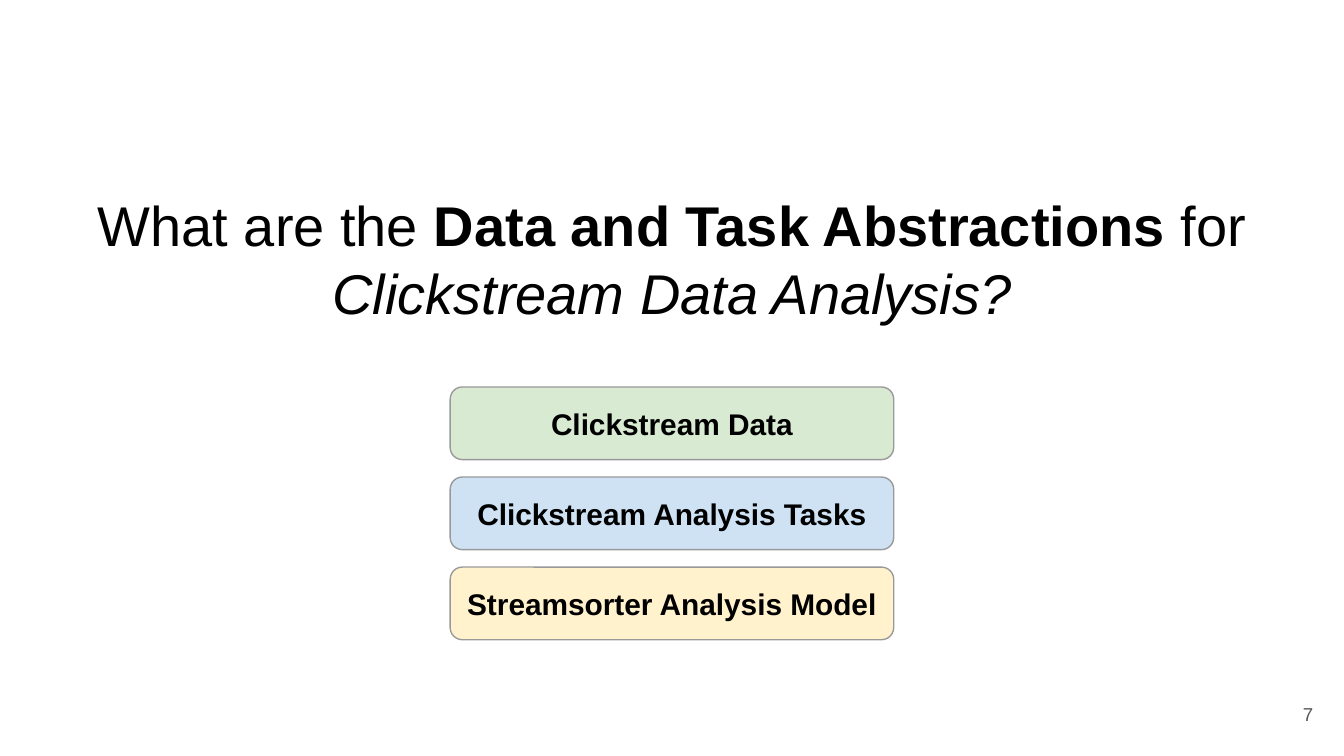
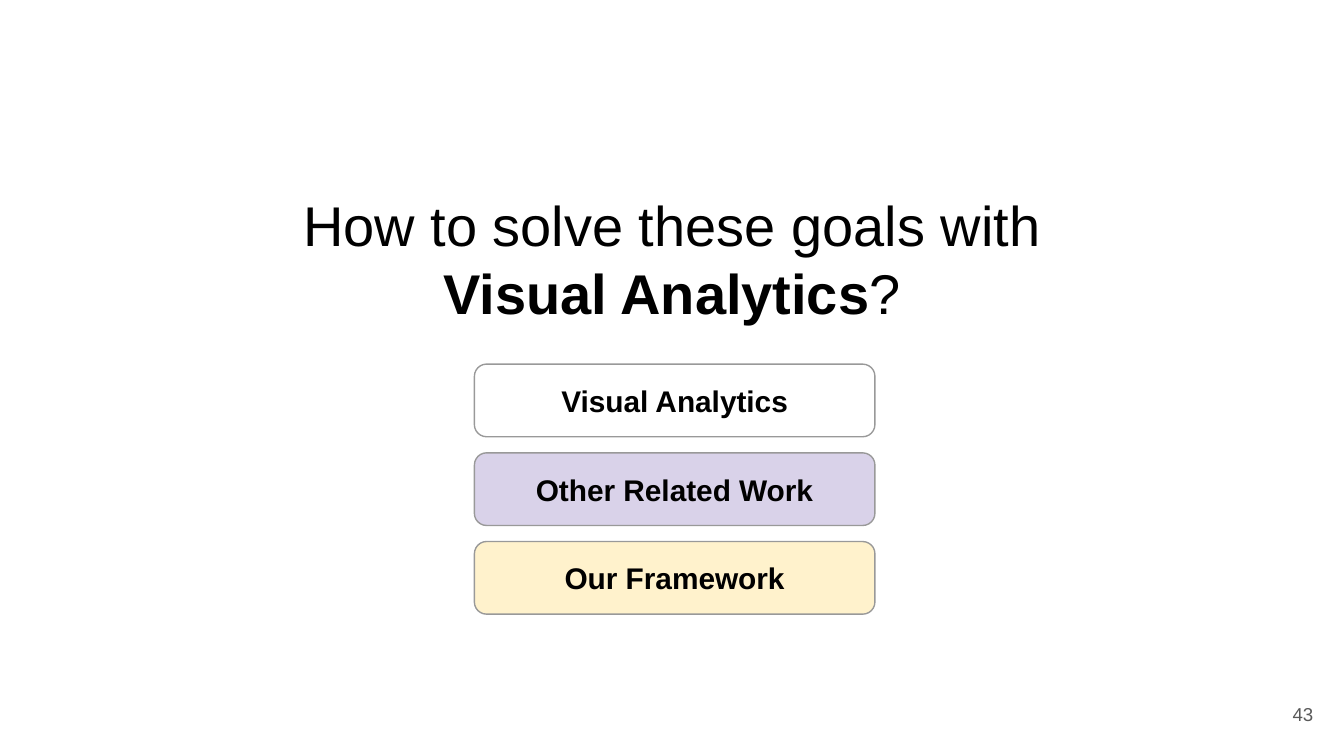
import pptx
import pptx.util
import pptx.dml.color
import pptx.enum.shapes
import pptx.enum.text

WIDTH = 10
HEIGHT = WIDTH * 9 / 16
COLOURS = {
    "text": "000000",
    "number": "595959",
    "border": "999999",
    "white": "FFFFFF",
    "green": "D9EAD3",
    "blue": "CFE2F3",
    "purple": "D9D2E9",
    "yellow": "FFF2CC",
}
FONT = "Arial"
TITLE_AREA = (0.34, 1.46, 9.32, 0.92)
NUMBER_AREA = (9.27, 5.1, 0.6, 0.43)
BUTTON_HEIGHT = 0.54

SLIDES = [
    {
        "title": [
            [("What are the ", ""), ("Data and Task Abstractions ", "bold"), ("for", "")],
            [("Clickstream Data Analysis?", "italic")],
        ],
        "number": "7",
        "column": (3.35, 3.3),
        "first_row": 2.88,
        "row_step": 0.67,
        "buttons": [
            ("Clickstream Data", "green"),
            ("Clickstream Analysis Tasks", "blue"),
            ("Streamsorter Analysis Model", "yellow"),
        ],
    },
    {
        "title": [
            [("How to solve these goals with", "")],
            [("Visual Analytics", "bold"), ("?", "")],
        ],
        "number": "43",
        "column": (3.53, 2.98),
        "first_row": 2.71,
        "row_step": 0.66,
        "buttons": [
            ("Visual Analytics", "white"),
            ("Other Related Work", "purple"),
            ("Our Framework", "yellow"),
        ],
    },
]


def colour(name):
    return pptx.dml.color.RGBColor.from_string(COLOURS[name])


def write_text(page, lines, area, size, ink="text", align="CENTER", fill=None):
    place = [pptx.util.Inches(length) for length in area]
    if fill:
        box = page.shapes.add_shape(pptx.enum.shapes.MSO_SHAPE.ROUNDED_RECTANGLE, *place)
        box.shadow.inherit = False
        box.fill.solid()
        box.fill.fore_color.rgb = colour(fill)
        box.line.color.rgb = colour("border")
        box.line.width = pptx.util.Pt(0.75)
    else:
        box = page.shapes.add_textbox(*place)
    frame = box.text_frame
    frame.word_wrap = True
    frame.vertical_anchor = pptx.enum.text.MSO_ANCHOR.MIDDLE
    for side in ("left", "top", "right", "bottom"):
        setattr(frame, f"margin_{side}", pptx.util.Inches(0.1))
    for index, line in enumerate(lines):
        para = frame.add_paragraph() if index else frame.paragraphs[0]
        para.alignment = getattr(pptx.enum.text.PP_ALIGN, align)
        for text, style in line:
            span = para.add_run()
            span.text = text
            span.font.name = FONT
            span.font.size = pptx.util.Pt(size)
            span.font.bold = style == "bold"
            span.font.italic = style == "italic"
            span.font.color.rgb = colour(ink)


deck = pptx.Presentation()
deck.slide_width = pptx.util.Inches(WIDTH)
deck.slide_height = pptx.util.Inches(HEIGHT)

for content in SLIDES:
    page = deck.slides.add_slide(deck.slide_layouts[6])
    page.background.fill.solid()
    page.background.fill.fore_color.rgb = colour("white")
    write_text(page, content["title"], TITLE_AREA, 30)
    left, width = content["column"]
    for row, (label, fill) in enumerate(content["buttons"]):
        top = content["first_row"] + row * content["row_step"]
        area = (left, top, width, BUTTON_HEIGHT)
        write_text(page, [[(label, "bold")]], area, 16, fill=fill)
    write_text(page, [[(content["number"], "")]], NUMBER_AREA, 10, ink="number", align="RIGHT")

deck.save("out.pptx")
